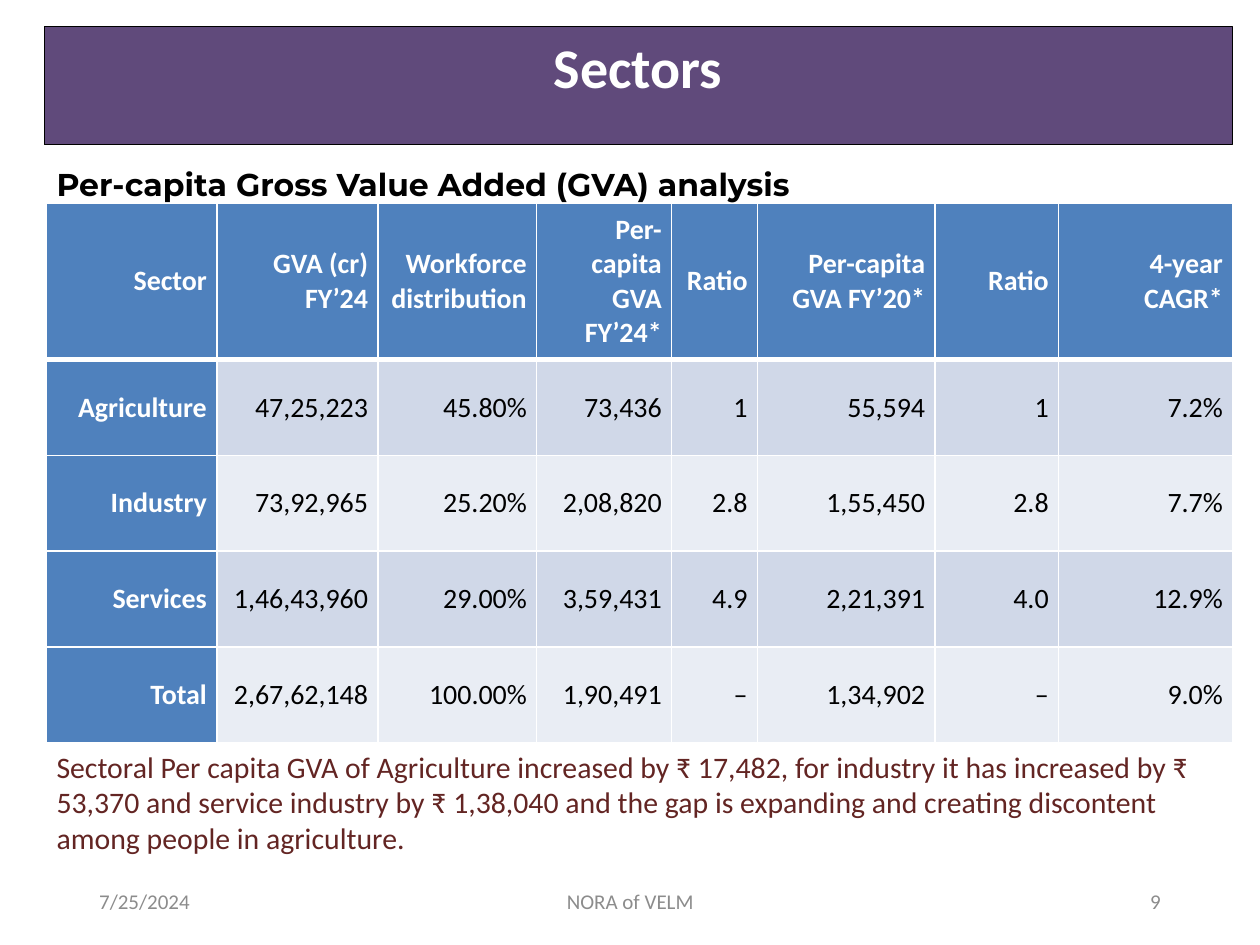
"""Build the Sectors slide with its per-capita GVA table."""
from lxml.etree import SubElement
from pptx import Presentation
from pptx.dml.color import RGBColor as RGB
from pptx.enum.text import MSO_ANCHOR as Anchor, MSO_AUTO_SIZE as Auto, PP_ALIGN as Align
from pptx.oxml.ns import qn
from pptx.util import Cm, Pt

COLORS = {
    "purple": "604A7B", "blue": "4F81BD", "odd": "D0D8E8", "even": "E9EDF4",
    "white": "FFFFFF", "black": "000000", "gray": "8C8C8C", "maroon": "632523",
}


def write(frame, text, size, color, align=Align.LEFT, bold=False, face="Calibri", after=0):
    """Put one formatted paragraph in a text frame."""
    para = frame.paragraphs[0]
    para.alignment = align
    para.space_after = Pt(after)
    run = para.add_run()
    run.text = text
    for name, value in {"size": Pt(size), "bold": bold, "name": face}.items():
        setattr(run.font, name, value)
    run.font.color.rgb = RGB.from_string(COLORS[color])


def edge(cell, side, width):
    """Draw one white border of a table cell."""
    line = SubElement(cell._tc.get_or_add_tcPr(), qn(f"a:{side}"), w=str(Pt(width)))
    fill = SubElement(line, qn("a:solidFill"))
    SubElement(fill, qn("a:srgbClr"), val=COLORS["white"])


deck = Presentation()
deck.slide_width, deck.slide_height = Cm(25.4), Cm(19.05)
slide = deck.slides.add_slide(deck.slide_layouts[5])

title = slide.shapes.title
box = {"left": Cm(0.89), "top": Cm(0.53), "width": Cm(23.95), "height": Cm(2.39)}
for name, value in box.items():
    setattr(title, name, value)
title.fill.solid()
title.fill.fore_color.rgb = RGB.from_string(COLORS["purple"])
title.line.color.rgb = RGB.from_string(COLORS["black"])
title.line.width = Pt(0.75)
title.text_frame.auto_size = Auto.NONE
title.text_frame.vertical_anchor = Anchor.TOP
write(title.text_frame, "Sectors", 32, "white", Align.CENTER, True)

rows = [
    ["Sector", "GVA (cr) FY’24", "Workforce distribution", "Per-capita GVA FY’24*",
     "Ratio", "Per-capita GVA FY’20*", "Ratio", "4-year CAGR*"],
    ["Agriculture", "47,25,223", "45.80%", "73,436", "1", "55,594", "1", "7.2%"],
    ["Industry", "73,92,965", "25.20%", "2,08,820", "2.8", "1,55,450", "2.8", "7.7%"],
    ["Services", "1,46,43,960", "29.00%", "3,59,431", "4.9", "2,21,391", "4.0", "12.9%"],
    ["Total", "2,67,62,148", "100.00%", "1,90,491", "–", "1,34,902", "–", "9.0%"],
]
widths = [3.43, 3.25, 3.2, 2.72, 1.73, 3.58, 2.49, 3.51]
heights = [2.95] + [1.93] * 4
table = slide.shapes.add_table(
    len(rows), len(widths), Cm(0.94), Cm(4.09), Cm(sum(widths)), Cm(sum(heights))).table
table.first_col = True
for col, width in zip(table.columns, widths):
    col.width = Cm(width)
for row, height in zip(table.rows, heights):
    row.height = Cm(height)

inset = Cm(0.2)
style = {"vertical_anchor": Anchor.MIDDLE, "margin_left": inset, "margin_right": inset,
         "margin_top": inset, "margin_bottom": inset}
for r, row in enumerate(rows):
    for c, text in enumerate(row):
        cell = table.cell(r, c)
        head = r == 0 or c == 0
        for name, value in style.items():
            setattr(cell, name, value)
        write(cell.text_frame, text, 16, "white" if head else "black", Align.RIGHT, head)
        edges = {"lnL": 1, "lnR": 1, "lnT": 3 if r == 1 else 1, "lnB": 3 if r == 0 else 1}
        for side, width in edges.items():
            edge(cell, side, width)
        cell.fill.solid()
        tint = "blue" if head else "odd" if r % 2 else "even"
        cell.fill.fore_color.rgb = RGB.from_string(COLORS[tint])

note = ("Sectoral Per capita GVA of Agriculture increased by ₹ 17,482, for industry it has "
        "increased by ₹ 53,370 and service industry by ₹ 1,38,040 and the gap is expanding "
        "and creating discontent among people in agriculture.")
foot = {"size": 12, "color": "gray", "after": 6}
texts = [
    ("Per-capita Gross Value Added (GVA) analysis", (0.89, 3.2, 16.59, 1.02), Anchor.TOP,
     {"size": 18, "color": "black", "bold": True, "face": "Montserrat"}),
    (note, (0.89, 14.96, 23.95, 2.44), Anchor.TOP, {"size": 17, "color": "maroon"}),
    ("7/25/2024", (1.75, 17.65, 5.72, 1.02), Anchor.MIDDLE, foot),
    ("NORA of VELM", (8.41, 17.65, 8.59, 1.02), Anchor.MIDDLE, {**foot, "align": Align.CENTER}),
    ("9", (17.93, 17.65, 5.72, 1.02), Anchor.MIDDLE, {**foot, "align": Align.RIGHT}),
]
for text, place, anchor, form in texts:
    frame = slide.shapes.add_textbox(*map(Cm, place)).text_frame
    frame.word_wrap = True
    frame.vertical_anchor = anchor
    write(frame, text, **form)

deck.save("out.pptx")
